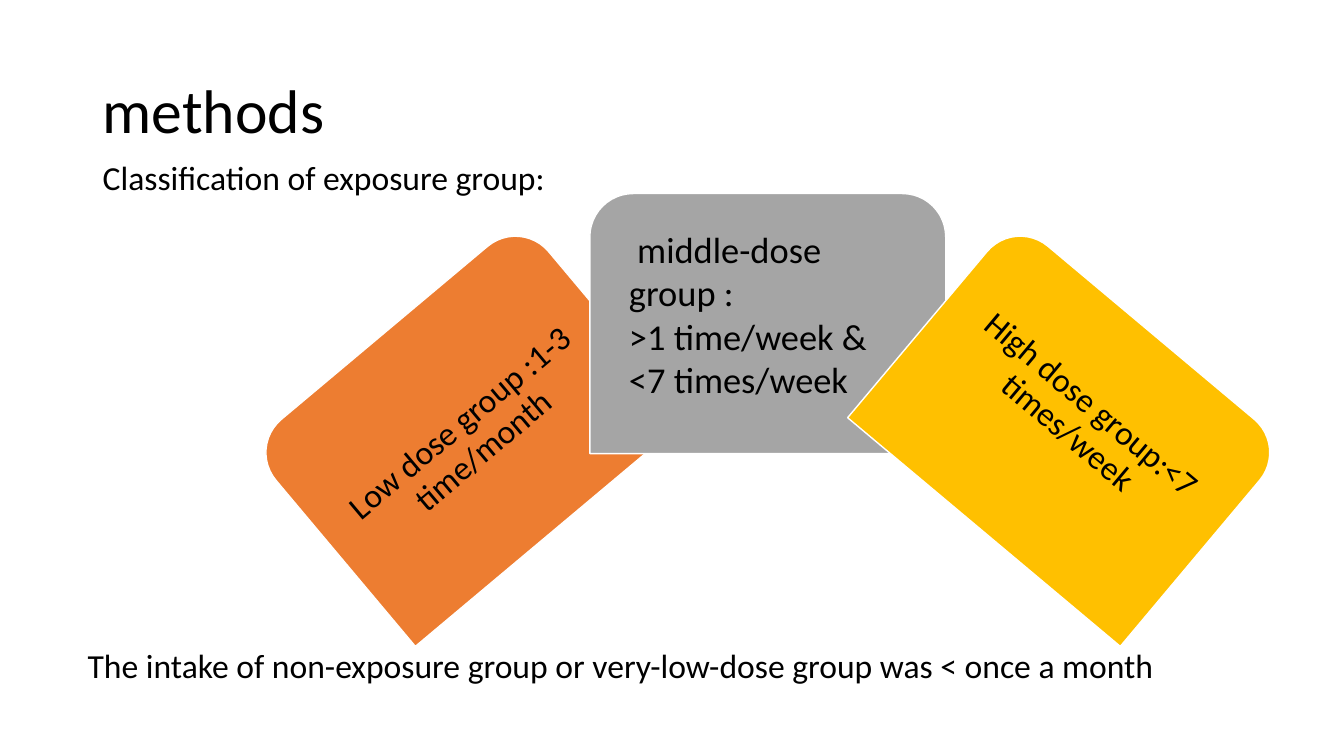
from dataclasses import dataclass

from pptx import Presentation
from pptx.dml.color import RGBColor
from pptx.enum.shapes import MSO_SHAPE
from pptx.enum.text import MSO_ANCHOR, MSO_AUTO_SIZE, PP_ALIGN
from pptx.slide import Slide
from pptx.text.text import TextFrame
from pptx.util import Inches, Pt

BLACK = RGBColor(0, 0, 0)
WHITE = RGBColor(255, 255, 255)
ORANGE = RGBColor(0xED, 0x7D, 0x31)
GRAY = RGBColor(0xA5, 0xA5, 0xA5)
GOLD = RGBColor(0xFF, 0xC0, 0x00)

SLIDE_WIDTH, SLIDE_HEIGHT = Inches(13.33), Inches(7.5)
COLUMN, ROW = SLIDE_WIDTH / 100, SLIDE_HEIGHT / 100

CARD_WIDTH, CARD_HEIGHT = 26.48, 34.4
FAN_CENTER, FAN_STEP = 57.13, 22.3
FAN_TOP, FAN_DROP = 25.6, 14.4
TILT = 40

PLAIN = {"word_wrap": True, "auto_size": MSO_AUTO_SIZE.NONE}
MIDDLE = PLAIN | {"vertical_anchor": MSO_ANCHOR.MIDDLE}
CARD_FRAME = MIDDLE | {"margin_top": Inches(0.03), "margin_bottom": Inches(0.03)}
RAISED_FRAME = CARD_FRAME | {"margin_bottom": Inches(0.51)}
UNWRAPPED = PLAIN | {"word_wrap": False}

TIGHT = {"alignment": PP_ALIGN.LEFT, "line_spacing": 0.9}
CENTERED = {"alignment": PP_ALIGN.CENTER, "line_spacing": 0.9, "space_after": Pt(8)}
LOOSE = {"alignment": PP_ALIGN.LEFT}


@dataclass(frozen=True)
class Box:
    left: float
    top: float
    width: float
    height: float

    def lengths(self) -> dict[str, int]:
        return {
            "left": round(self.left * COLUMN),
            "top": round(self.top * ROW),
            "width": round(self.width * COLUMN),
            "height": round(self.height * ROW),
        }


@dataclass(frozen=True)
class Wording:
    lines: tuple[str, ...]
    box: Box
    size: int
    frame: dict
    paragraph: dict
    rotation: int = 0


@dataclass(frozen=True)
class DoseCard:
    side: int
    color: RGBColor
    label: Wording | None = None


def apply(target: object, values: dict) -> None:
    for name, value in values.items():
        setattr(target, name, value)


def write(frame: TextFrame, wording: Wording) -> None:
    apply(frame, wording.frame)
    for index, line in enumerate(wording.lines):
        paragraph = frame.add_paragraph() if index else frame.paragraphs[0]
        apply(paragraph, wording.paragraph)
        run = paragraph.add_run()
        run.text = line
        apply(run.font, {"name": "Calibri", "size": Pt(wording.size)})
        run.font.color.rgb = BLACK


def add_wording(slide: Slide, wording: Wording) -> None:
    textbox = slide.shapes.add_textbox(**wording.box.lengths())
    textbox.rotation = wording.rotation
    write(textbox.text_frame, wording)


def add_card(slide: Slide, card: DoseCard) -> None:
    box = Box(
        FAN_CENTER + card.side * FAN_STEP - CARD_WIDTH / 2,
        FAN_TOP + abs(card.side) * FAN_DROP,
        CARD_WIDTH,
        CARD_HEIGHT,
    )
    panel = slide.shapes.add_shape(MSO_SHAPE.ROUND_2_SAME_RECTANGLE, **box.lengths())
    panel.rotation = card.side * TILT % 360
    panel.shadow.inherit = False
    panel.fill.solid()
    panel.fill.fore_color.rgb = card.color
    panel.line.color.rgb = WHITE
    panel.line.width = Pt(1)
    if card.label:
        add_wording(slide, card.label)


HEADING = Wording(("methods",), Box(6.9, 5.33, 86.25, 19.33), 44, MIDDLE, TIGHT)
INTRO = Wording(
    ("Classification of exposure group:",),
    Box(6.9, 20.67, 34.6, 11.33), 24, PLAIN, TIGHT,
)
LOW_DOSE = Wording(
    ("Low dose group :1-3 time/month",),
    Box(22.8, 41.47, 24.6, 32.8), 24, CARD_FRAME, CENTERED, 360 - TILT,
)
HIGH_DOSE = Wording(
    ("High dose group:<7 times/week",),
    Box(66.83, 41.47, 24.6, 32.8), 24, RAISED_FRAME, CENTERED, TILT,
)
MIDDLE_DOSE = Wording(
    (" middle-dose group :", ">1 time/week &", "<7 times/week"),
    Box(46.06, 29.33, 20.33, 24.67), 26, PLAIN, LOOSE,
)
NON_EXPOSURE = Wording(
    ("The intake of non-exposure group or very-low-dose group was < once a month",),
    Box(5.78, 84.67, 82.2, 6.67), 24, UNWRAPPED, LOOSE,
)
DOSE_CARDS = (
    DoseCard(-1, ORANGE, LOW_DOSE),
    DoseCard(0, GRAY),
    DoseCard(1, GOLD, HIGH_DOSE),
)


def main() -> None:
    deck = Presentation()
    apply(deck, {"slide_width": SLIDE_WIDTH, "slide_height": SLIDE_HEIGHT})
    slide = deck.slides.add_slide(deck.slide_layouts.get_by_name("Title Only"))
    heading = slide.shapes.title
    apply(heading, HEADING.box.lengths())
    write(heading.text_frame, HEADING)
    add_wording(slide, INTRO)
    for card in DOSE_CARDS:
        add_card(slide, card)
    for wording in (MIDDLE_DOSE, NON_EXPOSURE):
        add_wording(slide, wording)
    deck.save("out.pptx")


if __name__ == "__main__":
    main()
